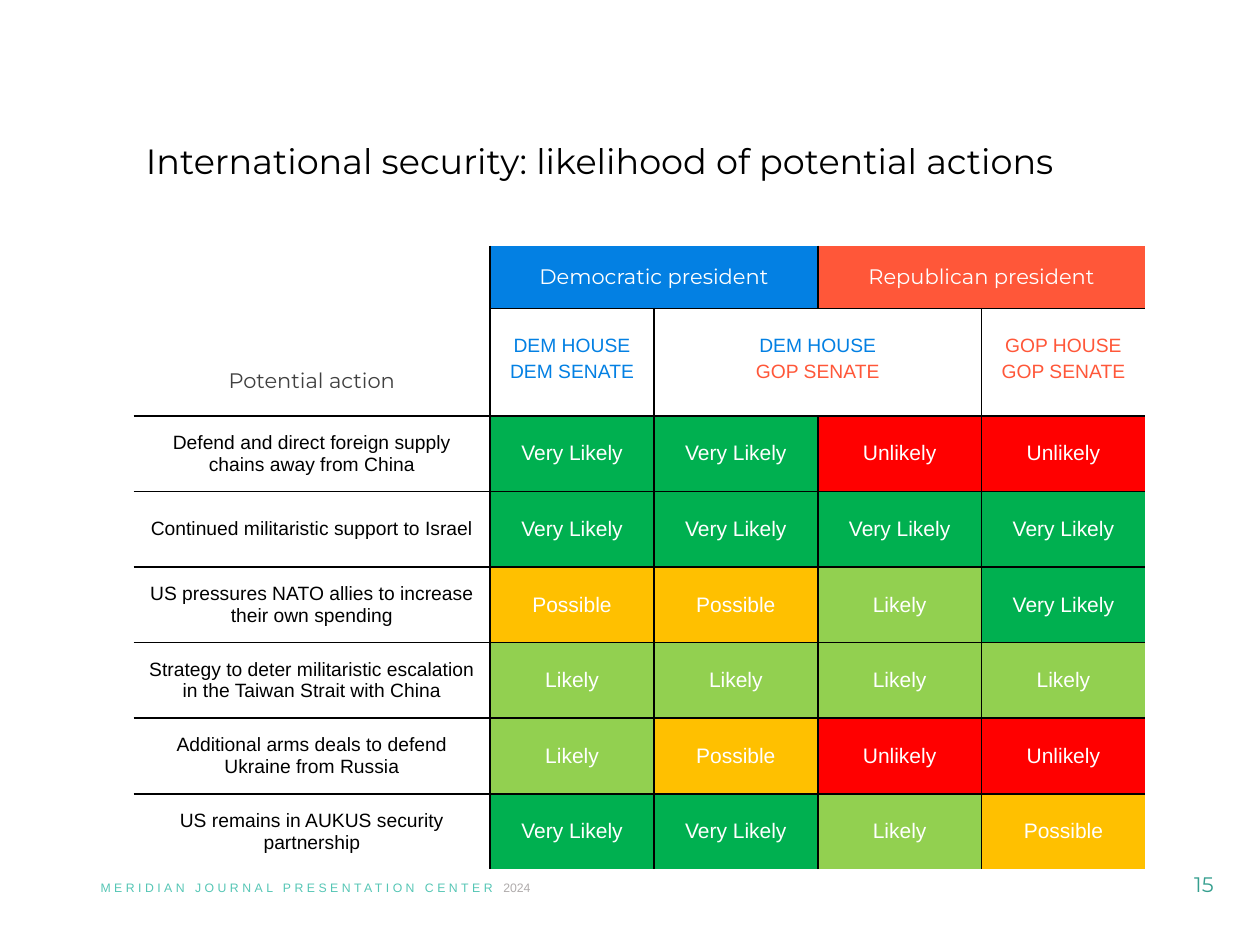
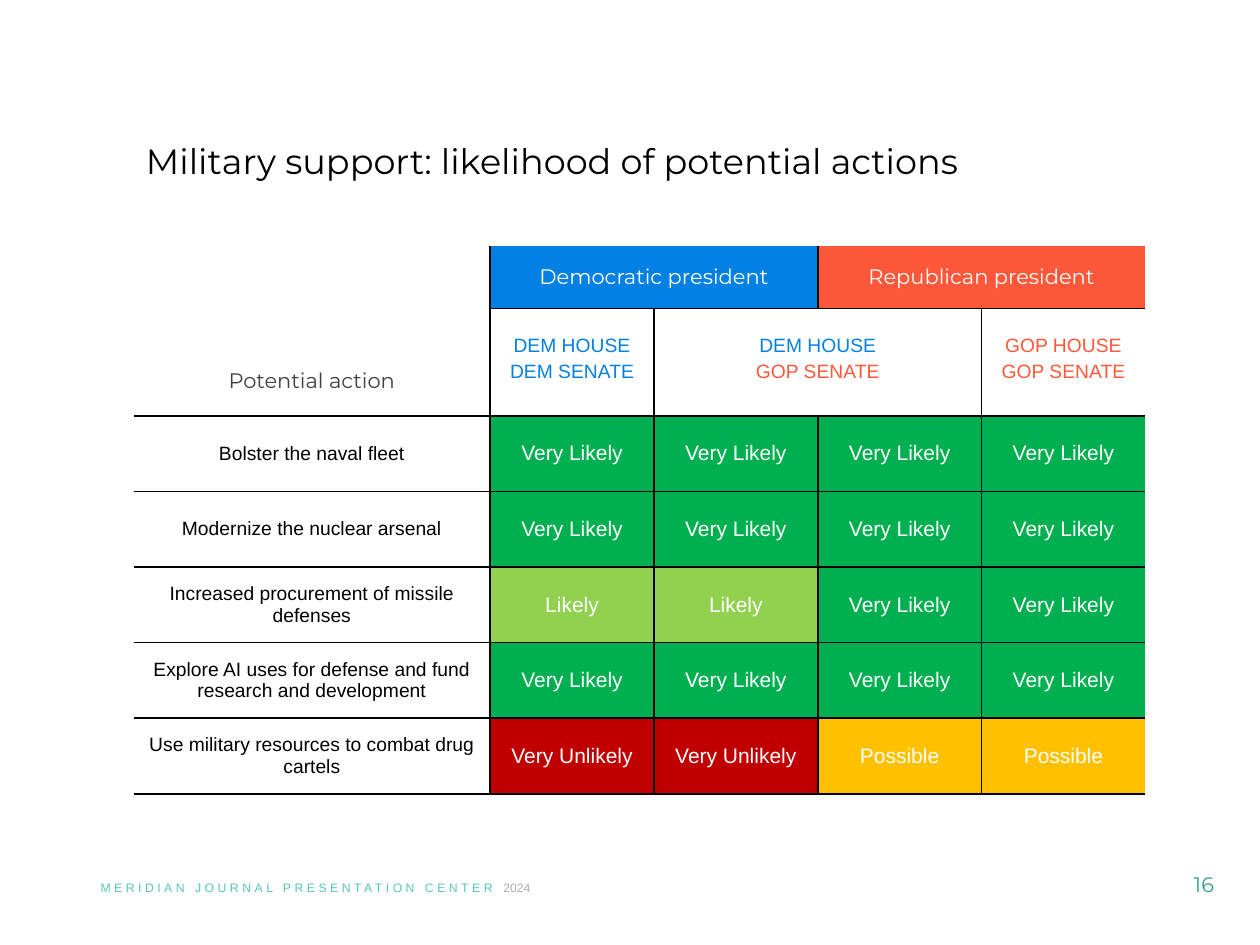
"""Build two slides rating how likely policy actions are under each election result."""
from pptx import Presentation
from pptx import util as u
from pptx.dml.color import RGBColor
from pptx.enum import text
from pptx.oxml.xmlchemy import OxmlElement

Pt = u.Pt
HEAD, BODY = "Montserrat", "Arial"
COLORS = {
    "black": "000000", "white": "FFFFFF", "grey": "404040", "year": "AFABAB",
    "footer": "55C6B5", "number": "359F8F", "dem": "0380E3", "gop": "FF5739",
}
RATINGS = {
    "Very Likely": "00B050", "Likely": "92D050", "Possible": "FFC000",
    "Unlikely": "FF0000", "Very Unlikely": "C00000",
}
LEFT, WIDTH = 76.3, 578.2
COLUMNS = [203.8] + [93.6] * 4
HEADER_ROWS = [36, 21.6, 39.6]
ACTION_ROW = 43.2
MERGES = [(0, 0, 1, 0), (0, 1, 0, 2), (0, 3, 0, 4),
          (1, 1, 2, 1), (1, 2, 2, 3), (1, 4, 2, 4)]
CHAMBERS = [(1, "dem", "dem"), (2, "dem", "gop"), (4, "gop", "gop")]

SECURITY = [
    ("Defend and direct foreign supply chains away from China",
     "Very Likely", "Very Likely", "Unlikely", "Unlikely"),
    ("Continued militaristic support to Israel",
     "Very Likely", "Very Likely", "Very Likely", "Very Likely"),
    ("US pressures NATO allies to increase their own spending",
     "Possible", "Possible", "Likely", "Very Likely"),
    ("Strategy to deter militaristic escalation in the Taiwan Strait with China",
     "Likely", "Likely", "Likely", "Likely"),
    ("Additional arms deals to defend Ukraine from Russia",
     "Likely", "Possible", "Unlikely", "Unlikely"),
    ("US remains in AUKUS security partnership",
     "Very Likely", "Very Likely", "Likely", "Possible"),
]
MILITARY = [
    ("Bolster the naval fleet",
     "Very Likely", "Very Likely", "Very Likely", "Very Likely"),
    ("Modernize the nuclear arsenal",
     "Very Likely", "Very Likely", "Very Likely", "Very Likely"),
    ("Increased procurement of missile defenses",
     "Likely", "Likely", "Very Likely", "Very Likely"),
    ("Explore AI uses for defense and fund research and development",
     "Very Likely", "Very Likely", "Very Likely", "Very Likely"),
    ("Use military resources to combat drug cartels",
     "Very Unlikely", "Very Unlikely", "Possible", "Possible"),
]


def add_run(p, words, size=12, font=BODY, color="black", spacing=None):
    """Add a formatted run to a paragraph."""
    r = p.add_run()
    r.text = words
    r.font.size, r.font.name = Pt(size), font
    r.font.color.rgb = RGBColor.from_string(COLORS[color])
    if spacing:
        r.font._element.set("spc", str(spacing * 100))


def add_box(s, left, top, width, height, anchor=text.MSO_ANCHOR.MIDDLE):
    """Add a wrapping text box and return its first paragraph."""
    tf = s.shapes.add_textbox(Pt(left), Pt(top), Pt(width), Pt(height)).text_frame
    tf.word_wrap = True
    tf.vertical_anchor = anchor
    return tf.paragraphs[0]


def add_frame(s, title, number):
    """Add the title, footer and page number."""
    p = add_box(s, LEFT, 64.8, WIDTH, 56.9)
    p.line_spacing = 0.9
    add_run(p, title, size=20, font=HEAD)
    p = add_box(s, 50.4, 499.7, 374.4, 15.8, text.MSO_ANCHOR.TOP)
    add_run(p, "MERIDIAN JOURNAL PRESENTATION CENTER ", size=7, color="footer", spacing=2)
    add_run(p, "2024", size=7, color="year")
    p = add_box(s, 655.9, 491, 64.1, 28.8)
    p.alignment = text.PP_ALIGN.CENTER
    add_run(p, str(number), font=HEAD, color="number")


def set_borders(cell, sides):
    """Draw the named sides of a cell and clear the others."""
    tc_pr = cell._tc.get_or_add_tcPr()
    for side in "LRTB":
        ln = OxmlElement(f"a:ln{side}")
        ln.set("w", str(Pt(1)))
        fill = OxmlElement("a:solidFill" if side in sides else "a:noFill")
        if side in sides:
            clr = OxmlElement("a:srgbClr")
            clr.set("val", COLORS["black"])
            fill.append(clr)
        ln.append(fill)
        tc_pr.append(ln)


def block_of(row, col):
    """Return the merged block that holds a cell, or the cell itself."""
    for block in MERGES:
        if block[0] <= row <= block[2] and block[1] <= col <= block[3]:
            return block
    return row, col, row, col


def cell_sides(row, col, last_row, closed):
    """Return the sides of a cell that carry a rule."""
    top, left, bottom, right = block_of(row, col)
    blank_corner = col == 0 and row < 2
    rules = {
        "L": col == left and col > 0,
        "R": col == right and col < len(COLUMNS) - 1,
        "T": row == top and row > 0 and not (col == 0 and row == 2),
        "B": row == bottom and (row < last_row or closed) and not blank_corner,
    }
    return [side for side, drawn in rules.items() if drawn]


def fill_cell(cell, lines, fill=None, line_spacing=None, **fmt):
    """Write centred lines, given as (words, colour), and fill the cell."""
    for i, (words, color) in enumerate(lines):
        tf = cell.text_frame
        p = tf.add_paragraph() if i else tf.paragraphs[0]
        p.alignment = text.PP_ALIGN.CENTER
        p.space_after = Pt(6)
        if line_spacing:
            p.line_spacing = Pt(line_spacing)
        add_run(p, words, color=color, **fmt)
    if fill:
        cell.fill.solid()
        cell.fill.fore_color.rgb = RGBColor.from_string(fill)


def add_ratings(s, actions, closed):
    """Add the table of actions and their ratings."""
    heights = HEADER_ROWS + [ACTION_ROW] * len(actions)
    table = s.shapes.add_table(len(heights), len(COLUMNS), Pt(LEFT), Pt(140.4),
                               Pt(WIDTH), Pt(sum(heights))).table
    table.first_row = table.horz_banding = False
    for column, width in zip(table.columns, COLUMNS):
        column.width = Pt(width)
    for r, height in enumerate(heights):
        table.rows[r].height = Pt(height)
        for c in range(len(COLUMNS)):
            cell = table.cell(r, c)
            cell.vertical_anchor = text.MSO_ANCHOR.MIDDLE
            set_borders(cell, cell_sides(r, c, len(heights) - 1, closed))
            cell.fill.background()
            cell.text_frame.paragraphs[0]._p.get_or_add_endParaRPr().set("sz", "600")
    for top, left, bottom, right in MERGES:
        table.cell(top, left).merge(table.cell(bottom, right))

    for col, name, party in ((1, "Democratic", "dem"), (3, "Republican", "gop")):
        fill_cell(table.cell(0, col), [(f"{name} president", "white")],
                  fill=COLORS[party], font=HEAD)
    for col, house, senate in CHAMBERS:
        fill_cell(table.cell(1, col),
                  [(f"{house.upper()} HOUSE", house), (f"{senate.upper()} SENATE", senate)],
                  line_spacing=8.8, size=11)
    fill_cell(table.cell(2, 0), [("Potential action", "grey")], font=HEAD)
    for r, (action, *ratings) in enumerate(actions, len(HEADER_ROWS)):
        fill_cell(table.cell(r, 0), [(action, "black")], size=11)
        for c, rating in enumerate(ratings, 1):
            fill_cell(table.cell(r, c), [(rating, "white")], fill=RATINGS[rating])


def main():
    """Build and save the presentation."""
    prs = Presentation()
    prs.slide_width, prs.slide_height = Pt(720), Pt(540)
    pages = [("International security", SECURITY, False), ("Military support", MILITARY, True)]
    for number, (topic, actions, closed) in enumerate(pages, 15):
        s = prs.slides.add_slide(prs.slide_layouts[6])
        add_ratings(s, actions, closed)
        add_frame(s, f"{topic}: likelihood of potential actions", number)
    prs.save("out.pptx")


if __name__ == "__main__":
    main()
